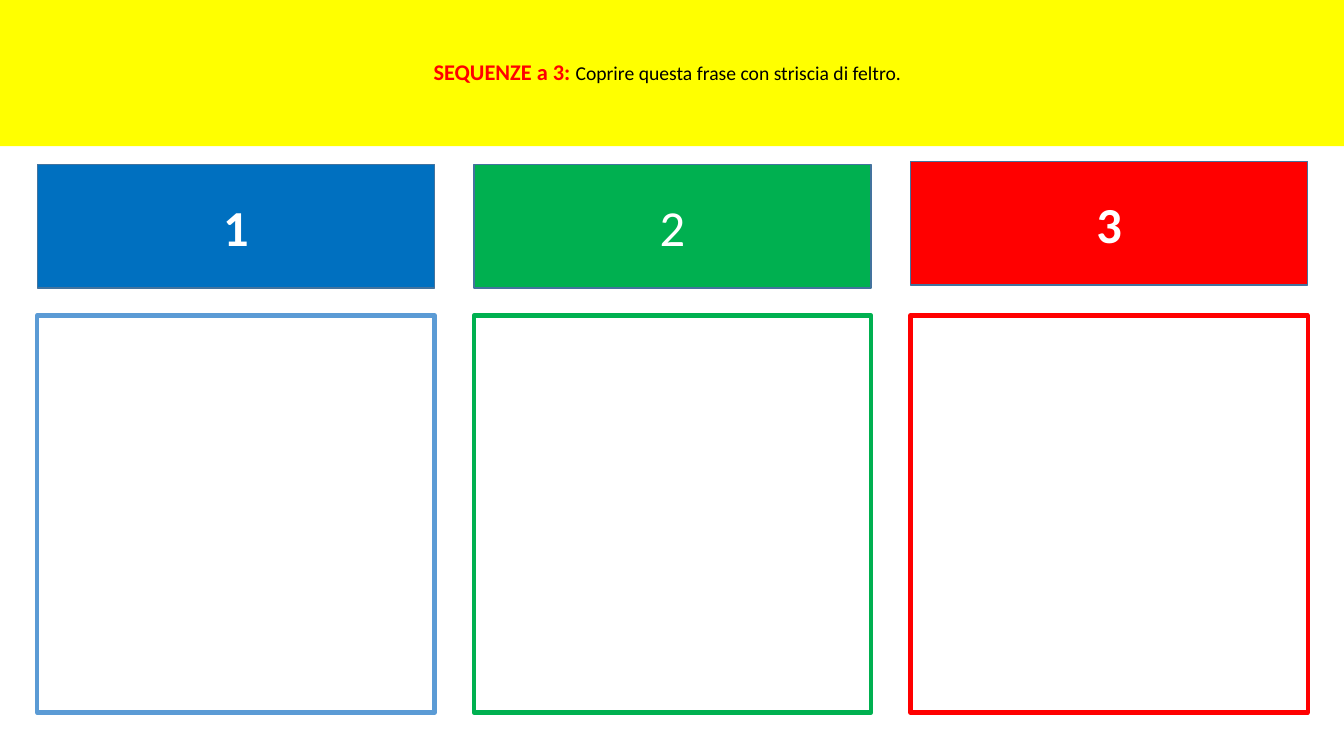
from dataclasses import dataclass

from pptx import Presentation
from pptx.dml.color import RGBColor
from pptx.enum.shapes import MSO_SHAPE as Shape
from pptx.enum.text import MSO_ANCHOR as Anchor, MSO_AUTO_SIZE as AutoSize, PP_ALIGN as Align
from pptx.shapes.autoshape import Shape as Box
from pptx.slide import Slide
from pptx.text.text import _Run as Run
from pptx.util import Inches, Pt

COLORS = {
    "white": "FFFFFF",
    "black": "000000",
    "yellow": "FFFF00",
    "blue": "0070C0",
    "light_blue": "5B9BD5",
    "green": "00B050",
    "red": "FF0000",
    "border": "43739E",
}
FONT = "Calibri"
PAGE_WIDTH, PAGE_HEIGHT = 13.33, 7.5
BANNER_HEIGHT = 1.45
FIRST_LEFT, COLUMN_STEP, COLUMN_WIDTH = 0.37, 4.33, 3.94
HEADER_HEIGHT = 1.23
FRAME_TOP = 3.13


@dataclass
class Step:
    label: str
    header_color: str
    frame_color: str
    header_top: float = 1.63
    bold: bool = True


STEPS = [
    Step("1", "blue", "light_blue"),
    Step("2", "green", "green", bold=False),
    Step("3", "red", "red", header_top=1.6),
]


def rgb(name: str) -> RGBColor:
    return RGBColor.from_string(COLORS[name])


def format_run(run: Run, size: float, color: str, bold: bool) -> None:
    run.font.name = FONT
    run.font.size = Pt(size)
    run.font.bold = bold
    run.font.color.rgb = rgb(color)


def add_box(page: Slide, left: float, top: float, height: float,
            fill: str, line: str, line_width: float) -> Box:
    box = page.shapes.add_shape(Shape.RECTANGLE, Inches(left), Inches(top),
                                Inches(COLUMN_WIDTH), Inches(height))
    box.shadow.inherit = False
    box.fill.solid()
    box.fill.fore_color.rgb = rgb(fill)
    box.line.color.rgb = rgb(line)
    box.line.width = Pt(line_width)
    return box


def add_step(page: Slide, step: Step, left: float) -> None:
    """Draw a numbered header with the empty square frame below it."""
    add_box(page, left, FRAME_TOP, COLUMN_WIDTH, "white", step.frame_color, 3)
    header = add_box(page, left, step.header_top, HEADER_HEIGHT,
                     step.header_color, "border", 1)
    header.text_frame.text = step.label
    header.text_frame.vertical_anchor = Anchor.MIDDLE
    para = header.text_frame.paragraphs[0]
    para.alignment = Align.CENTER
    format_run(para.runs[0], 36, "white", step.bold)


def fill_banner(page: Slide) -> None:
    banner = page.shapes.title
    banner.left, banner.top = Inches(0), Inches(0)
    banner.width, banner.height = Inches(PAGE_WIDTH), Inches(BANNER_HEIGHT)
    banner.fill.solid()
    banner.fill.fore_color.rgb = rgb("yellow")
    frame = banner.text_frame
    frame.word_wrap = True
    frame.auto_size = AutoSize.NONE
    frame.vertical_anchor = Anchor.MIDDLE
    frame.text = "SEQUENZE a 3: "
    para = frame.paragraphs[0]
    para.alignment = Align.CENTER
    para.line_spacing = 0.9
    format_run(para.runs[0], 16, "red", True)
    instruction = para.add_run()
    instruction.text = "Coprire questa frase con striscia di feltro.  "
    format_run(instruction, 14, "black", False)


def main() -> None:
    deck = Presentation()
    deck.slide_width, deck.slide_height = Inches(PAGE_WIDTH), Inches(PAGE_HEIGHT)
    page = deck.slides.add_slide(deck.slide_layouts.get_by_name("Title Only"))
    fill_banner(page)
    for index, step in enumerate(STEPS):
        add_step(page, step, FIRST_LEFT + index * COLUMN_STEP)
    deck.save("out.pptx")


if __name__ == "__main__":
    main()
